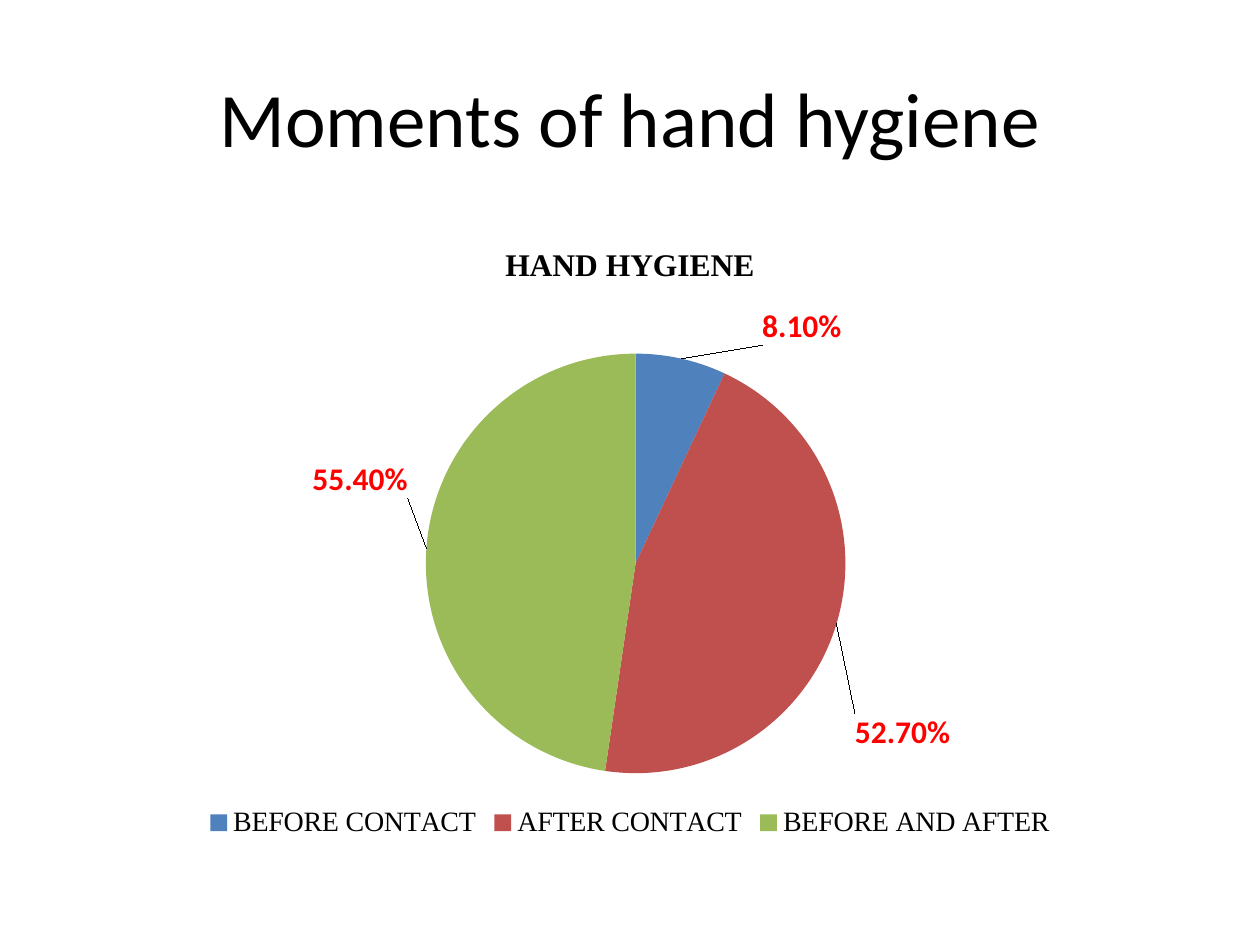
from lxml.etree import SubElement
from pptx import Presentation
from pptx.chart.data import CategoryChartData
from pptx.dml.color import RGBColor
from pptx.enum.chart import XL_CHART_TYPE, XL_LABEL_POSITION, XL_LEGEND_POSITION
from pptx.enum.text import MSO_ANCHOR, PP_ALIGN
from pptx.oxml.ns import qn
from pptx.util import Inches, Pt

PERCENT = "0.00%"
# category, share, slice colour, label shift as a fraction of the chart
MOMENTS = [
    ("BEFORE CONTACT", 0.081, "4F81BD", (0.07, -0.01)),
    ("AFTER CONTACT", 0.527, "C0504D", (0.01, 0.14)),
    ("BEFORE AND AFTER", 0.554, "9BBB59", (-0.01, -0.11)),
]


def style_font(font, name, size, color="000000", bold=False):
    font.name = name
    font.size = Pt(size)
    font.bold = bold
    font.color.rgb = RGBColor.from_string(color)


def set_layout(layout, **settings):
    """Fill a chart layout element with manual placement, in schema order."""
    manual = SubElement(layout, qn("c:manualLayout"))
    for tag, value in settings.items():
        SubElement(manual, qn(f"c:{tag}")).set("val", str(value))


def add_title(slide, text):
    title = slide.shapes.title
    title.left, title.top = Inches(0.5), Inches(0.3)
    title.width, title.height = Inches(9), Inches(1.25)
    frame = title.text_frame
    frame.vertical_anchor = MSO_ANCHOR.MIDDLE
    paragraph = frame.paragraphs[0]
    paragraph.alignment = PP_ALIGN.CENTER
    run = paragraph.add_run()
    run.text = text
    style_font(run.font, "Calibri", 44)


def add_hygiene_pie(slide):
    categories, shares, _, _ = zip(*MOMENTS)
    pie_data = CategoryChartData(number_format=PERCENT)
    pie_data.categories = categories
    pie_data.add_series("Series 1", shares)
    chart = slide.shapes.add_chart(
        XL_CHART_TYPE.PIE, Inches(0.5), Inches(1.75), Inches(9), Inches(4.95), pie_data
    ).chart
    style_font(chart.font, "Calibri", 10)
    chart.plots[0].vary_by_categories = True
    add_heading(chart, "HAND HYGIENE")
    add_legend(chart)
    place_plot(chart)
    style_slices(chart.plots[0].series[0])


def add_heading(chart, text):
    chart.has_title = True
    run = chart.chart_title.text_frame.paragraphs[0].add_run()
    run.text = text
    style_font(run.font, "Times New Roman", 18, bold=True)


def add_legend(chart):
    chart.has_legend = True
    chart.legend.position = XL_LEGEND_POSITION.BOTTOM
    chart.legend.include_in_layout = False
    style_font(chart.legend.font, "Times New Roman", 16)


def place_plot(chart):
    plot_area = chart.plots[0]._element.getparent()
    layout = plot_area.find(qn("c:layout"))
    if layout is None:
        layout = SubElement(plot_area, qn("c:layout"))
        plot_area.insert(0, layout)
    set_layout(layout, layoutTarget="inner", xMode="edge", yMode="edge",
               x=0.32, y=0.21, w=0.37, h=0.68)


def style_slices(series):
    labels = series.data_labels
    labels.show_value = True
    labels.number_format = PERCENT
    labels.number_format_is_linked = False
    labels.position = XL_LABEL_POSITION.OUTSIDE_END
    style_font(labels.font, "Calibri", 18, "FF0000", bold=True)
    for index, (_, _, color, (shift_x, shift_y)) in enumerate(MOMENTS):
        point = series.points[index]
        point.format.fill.solid()
        point.format.fill.fore_color.rgb = RGBColor.from_string(color)
        label = point.data_label
        style_font(label.font, "Calibri", 18, "FF0000", bold=True)
        label.position = XL_LABEL_POSITION.OUTSIDE_END
        point_label = labels._element.findall(qn("c:dLbl"))[index]
        layout = SubElement(point_label, qn("c:layout"))
        point_label.insert(1, layout)
        set_layout(layout, x=shift_x, y=shift_y)


def main():
    presentation = Presentation()
    presentation.slide_width, presentation.slide_height = Inches(10), Inches(7.5)
    slide = presentation.slides.add_slide(presentation.slide_layouts[5])
    add_title(slide, "Moments of hand hygiene")
    add_hygiene_pie(slide)
    presentation.save("out.pptx")


if __name__ == "__main__":
    main()
